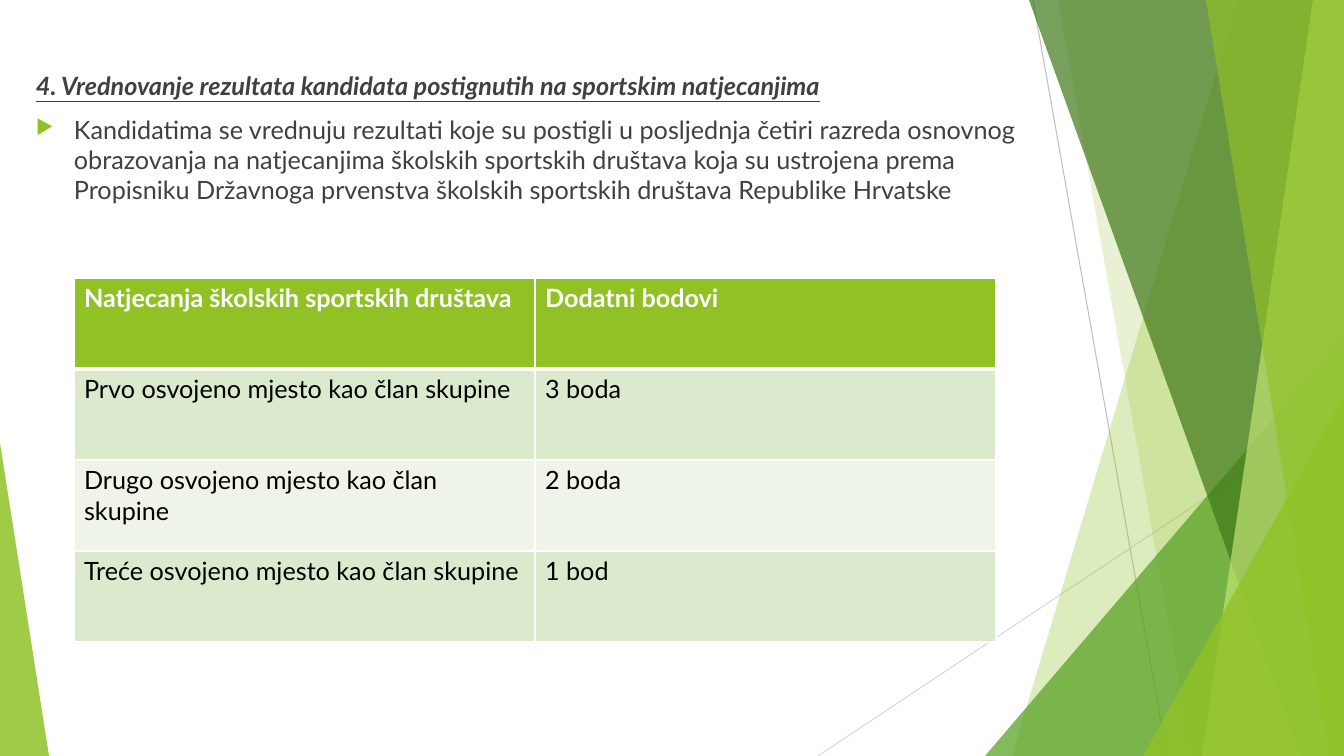
from lxml.etree import SubElement
from pptx import Presentation
from pptx.dml.color import RGBColor
from pptx.enum.shapes import MSO_CONNECTOR, MSO_SHAPE
from pptx.enum.text import MSO_ANCHOR
from pptx.oxml.ns import qn
from pptx.util import Emu, Pt

WIDTH, HEIGHT = 1344, 756
FONT = "Lato"
LIME, GREEN, DARK_GREEN, PALE_LIME = "90C226", "54A021", "3F7819", "C0E474"
WHITE, BLACK, GREY = "FFFFFF", "000000", "404040"

HEADING = "4. Vrednovanje rezultata kandidata postignutih na sportskim natjecanjima"
RULE = (
    "Kandidatima se vrednuju rezultati koje su postigli u posljednja četiri "
    "razreda osnovnog obrazovanja na natjecanjima školskih sportskih društava "
    "koja su ustrojena prema Propisniku Državnoga prvenstva školskih sportskih "
    "društava Republike Hrvatske"
)
POINTS = [
    ("Natjecanja školskih sportskih društava", "Dodatni bodovi"),
    ("Prvo osvojeno mjesto kao član skupine", "3 boda"),
    ("Drugo osvojeno mjesto kao član skupine", "2 boda"),
    ("Treće osvojeno mjesto kao član skupine", "1 bod"),
]


def px(length):
    return Emu(round(length * 12192000 / WIDTH))


def color(hex_value):
    return RGBColor.from_string(hex_value)


def format_font(font, **values):
    values = {"name": FONT, "size": Pt(18), **values}
    font.color.rgb = color(values.pop("ink"))
    for name, value in values.items():
        setattr(font, name, value)


def paint(facet, hex_value, opacity):
    facet.shadow.inherit = False
    facet.fill.solid()
    facet.fill.fore_color.rgb = color(hex_value)
    facet.line.fill.background()
    tint = facet.element.spPr.find(qn("a:solidFill")).find(qn("a:srgbClr"))
    SubElement(tint, qn("a:alpha"), val=str(opacity * 1000))


def add_ray(slide, start, end, hex_value):
    ray = slide.shapes.add_connector(
        MSO_CONNECTOR.STRAIGHT, *map(px, start), *map(px, end))
    ray.line.color.rgb = color(hex_value)
    ray.line.width = Pt(0.75)
    SubElement(ray.element.spPr, qn("a:effectLst"))


def add_band(slide, box, top_x, bottom_x, hex_value, opacity):
    """Fill from a slanted left edge to the right side of the box."""
    left, top, width, height = box
    right, bottom = left + width, top + height
    outline = slide.shapes.build_freeform(px(left + top_x), px(top), scale=1.0)
    corners = [(right, top), (right, bottom), (left + bottom_x, bottom)]
    outline.add_line_segments([(px(x), px(y)) for x, y in corners], close=True)
    paint(outline.convert_to_shape(), hex_value, opacity)


def add_corner(slide, box, width, height, apex, hex_value, opacity):
    """Put a right triangle in the lower corner; apex 0 is left, 1 is right."""
    left, top, box_width, box_height = box
    x = left + apex * (box_width - width)
    y = top + box_height - height
    corner = slide.shapes.add_shape(
        MSO_SHAPE.ISOSCELES_TRIANGLE, px(x), px(y), px(width), px(height))
    corner.adjustments[0] = apex
    paint(corner, hex_value, opacity)


def add_backdrop(slide, box):
    left, top, width, height = box
    right, bottom = left + width, top + height
    # Thin rays
    add_ray(slide, (left + 1033, top), (left + 1167, bottom), "BFBFBF")
    add_ray(slide, (right, top + 406), (left + 818, bottom), "D9D9D9")
    # Overlapping facets, back to front
    add_band(slide, box, 1238, 1012, LIME, 30)
    add_band(slide, box, 1058, 1192, LIME, 20)
    add_corner(slide, box, 359, 420, 1, GREEN, 72)
    add_band(slide, box, 1029, 1301, DARK_GREEN, 70)
    add_band(slide, box, 1313, 1202, PALE_LIME, 70)
    add_band(slide, box, 1206, 1329, LIME, 65)
    add_corner(slide, box, 201, 360, 1, LIME, 80)
    add_corner(slide, box, 49, 313, 0, LIME, 85)


def add_bullet(paragraph):
    properties = paragraph._p.get_or_add_pPr()
    properties.set("marL", str(px(38)))
    properties.set("indent", str(-px(38)))
    bullet_color = SubElement(properties, qn("a:buClr"))
    SubElement(bullet_color, qn("a:srgbClr"), val=LIME)
    SubElement(properties, qn("a:buSzPct"), val="80000")
    SubElement(properties, qn("a:buChar"), char="▶")


def add_body(slide, box):
    frame = slide.shapes.add_textbox(*map(px, box)).text_frame
    frame.word_wrap = True
    frame.vertical_anchor = MSO_ANCHOR.TOP
    # Heading
    heading = frame.paragraphs[0].add_run()
    heading.text = HEADING
    format_font(heading.font, ink=GREY, bold=True, italic=True, underline=True)
    # Rule
    paragraph = frame.add_paragraph()
    add_bullet(paragraph)
    paragraph.space_before = Pt(10)
    rule = paragraph.add_run()
    rule.text = RULE
    format_font(rule.font, ink=GREY)


def add_borders(cell, widths):
    properties = cell._tc.get_or_add_tcPr()
    for side, width in widths.items():
        border = SubElement(properties, qn(f"a:ln{side}"), w=str(Pt(width)))
        SubElement(SubElement(border, qn("a:solidFill")), qn("a:srgbClr"), val=WHITE)


def add_points_table(slide, box):
    left, top, width, height = box
    columns = len(POINTS[0])
    table = slide.shapes.add_table(len(POINTS), columns, *map(px, box)).table
    for column in table.columns:
        column.width = px(width / columns)
    for row_index, row in enumerate(POINTS):
        table.rows[row_index].height = px(height / len(POINTS))
        is_header = row_index == 0
        fill = LIME if is_header else ("EEF4E8", "DBE9CD")[row_index % 2]
        for column_index, text in enumerate(row):
            cell = table.cell(row_index, column_index)
            add_borders(cell, {"L": 1, "R": 1, "T": 3 if row_index == 1 else 1,
                               "B": 3 if is_header else 1})
            cell.fill.solid()
            cell.fill.fore_color.rgb = color(fill)
            entry = cell.text_frame.paragraphs[0].add_run()
            entry.text = text
            format_font(entry.font, ink=WHITE if is_header else BLACK, bold=is_header)


def main():
    presentation = Presentation()
    presentation.slide_width, presentation.slide_height = px(WIDTH), px(HEIGHT)
    slide = presentation.slides.add_slide(presentation.slide_layouts[6])
    add_backdrop(slide, (0, 0, WIDTH, HEIGHT))
    add_body(slide, (26, 65, 1017, 517))
    add_points_table(slide, (74, 278, 922, 364))
    presentation.save("out.pptx")


if __name__ == "__main__":
    main()
